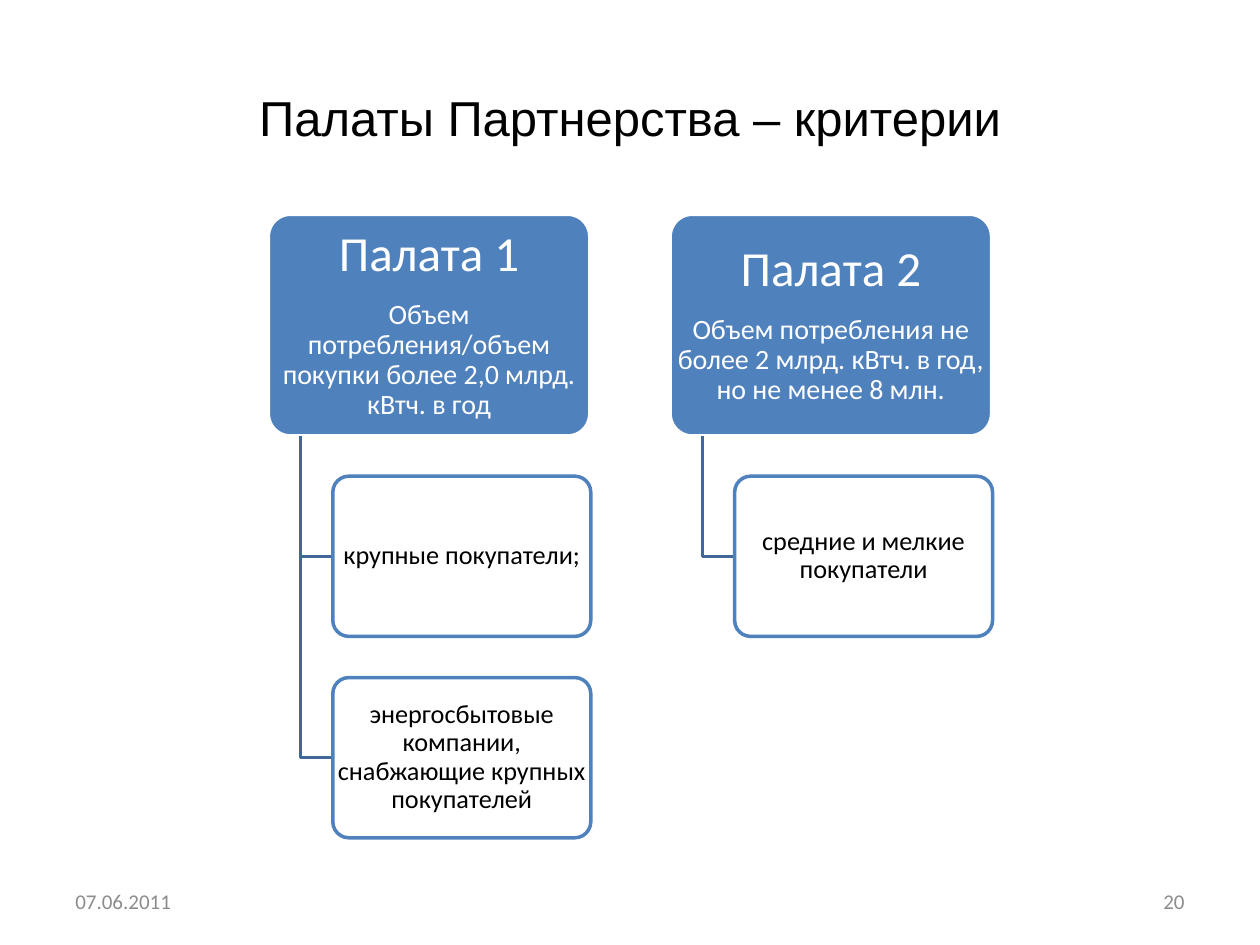
from lxml.etree import SubElement
from pptx import Presentation
from pptx.dml.color import RGBColor
from pptx.enum.shapes import MSO_SHAPE as Shape
from pptx.enum.text import MSO_ANCHOR as Anchor, PP_ALIGN as Align
from pptx.oxml.ns import qn
from pptx.util import Cm, Pt

BLACK = RGBColor(0x00, 0x00, 0x00)
WHITE = RGBColor(0xFF, 0xFF, 0xFF)
BLUE = RGBColor(0x4F, 0x81, 0xBD)
DARK_BLUE = RGBColor(0x3F, 0x67, 0x97)
GREY = RGBColor(0x8C, 0x8C, 0x8C)

CHAMBERS = [
    ("Палата 1",
     "Объем потребления/объем покупки более 2,0 млрд. кВтч. в год",
     ["крупные покупатели;",
      "энергосбытовые компании, снабжающие крупных покупателей"]),
    ("Палата 2",
     "Объем потребления не более 2 млрд. кВтч. в год, но не менее 8 млн.",
     ["средние и мелкие покупатели"]),
]

LEFT, TOP, COLUMN_STEP = 5.41, 4.32, 8.1
HEAD_WIDTH, HEAD_HEIGHT = 6.48, 4.47
MEMBER_TOP, MEMBER_STEP = 9.6, 4.06
MEMBER_WIDTH, MEMBER_HEIGHT = 5.2, 3.23
INDENT = 1.3


class Slide:
    font = "Calibri"
    line_width = Pt(2)

    def __init__(self, deck):
        self.page = deck.slides.add_slide(deck.slide_layouts[6])

    def add_text(self, para, text, size, color, align, font=None):
        para.alignment = align
        span = para.add_run()
        span.text = text
        span.font.name = font or self.font
        span.font.size = Pt(size)
        span.font.color.rgb = color

    def label(self, area, text, size, color, align, font=None):
        box = self.page.shapes.add_textbox(*map(Cm, area))
        frame = box.text_frame
        frame.word_wrap = True
        frame.vertical_anchor = Anchor.MIDDLE
        self.add_text(frame.paragraphs[0], text, size, color, align, font)

    def card(self, area, fill, border, color, lines, opacity=100):
        box = self.page.shapes.add_shape(Shape.ROUNDED_RECTANGLE, *map(Cm, area))
        box.adjustments[0] = 0.1
        box.shadow.inherit = False
        box.fill.solid()
        box.fill.fore_color.rgb = fill
        if opacity < 100:
            tint = box._element.spPr.find(qn("a:solidFill"))[0]
            SubElement(tint, qn("a:alpha")).set("val", str(opacity * 1000))
        box.line.color.rgb = border
        box.line.width = self.line_width
        frame = box.text_frame
        frame.word_wrap = True
        frame.vertical_anchor = Anchor.MIDDLE
        frame.margin_left = frame.margin_right = 0
        frame.margin_top = frame.margin_bottom = 0
        for index, (text, size) in enumerate(lines):
            para = frame.add_paragraph() if index else frame.paragraphs[0]
            para.line_spacing = 0.9
            para.space_after = Pt(round(size * 0.35))
            self.add_text(para, text, size, color, Align.CENTER)

    def elbow(self, left, top, right, bottom):
        builder = self.page.shapes.build_freeform(Cm(left), Cm(top))
        corners = [(Cm(left), Cm(bottom)), (Cm(right), Cm(bottom))]
        builder.add_line_segments(corners, close=False)
        branch = builder.convert_to_shape()
        branch.shadow.inherit = False
        branch.fill.background()
        branch.line.color.rgb = DARK_BLUE
        branch.line.width = self.line_width

    def chamber(self, left, name, criterion, members):
        self.card((left, TOP, HEAD_WIDTH, HEAD_HEIGHT), BLUE, WHITE, WHITE,
                  [(name, 28), (criterion, 16)])
        member_left = left + INDENT
        for index, member in enumerate(members):
            top = MEMBER_TOP + index * MEMBER_STEP
            self.elbow(left + INDENT / 2, TOP + HEAD_HEIGHT,
                       member_left, top + MEMBER_HEIGHT / 2)
            self.card((member_left, top, MEMBER_WIDTH, MEMBER_HEIGHT),
                      WHITE, BLUE, BLACK, [(member, 15)], opacity=90)


def main():
    deck = Presentation()
    deck.slide_width, deck.slide_height = Cm(25.4), Cm(19.05)
    slide = Slide(deck)
    slide.label((1.27, 0.76, 22.86, 3.18), "Палаты Партнерства – критерии",
                28, BLACK, Align.CENTER, "Arial")
    for index, chamber in enumerate(CHAMBERS):
        slide.chamber(LEFT + index * COLUMN_STEP, *chamber)
    slide.label((1.27, 17.65, 5.92, 1.02), "07.06.2011", 12, GREY, Align.LEFT)
    slide.label((18.21, 17.65, 5.92, 1.02), "20", 12, GREY, Align.RIGHT)
    deck.save("out.pptx")


if __name__ == "__main__":
    main()
